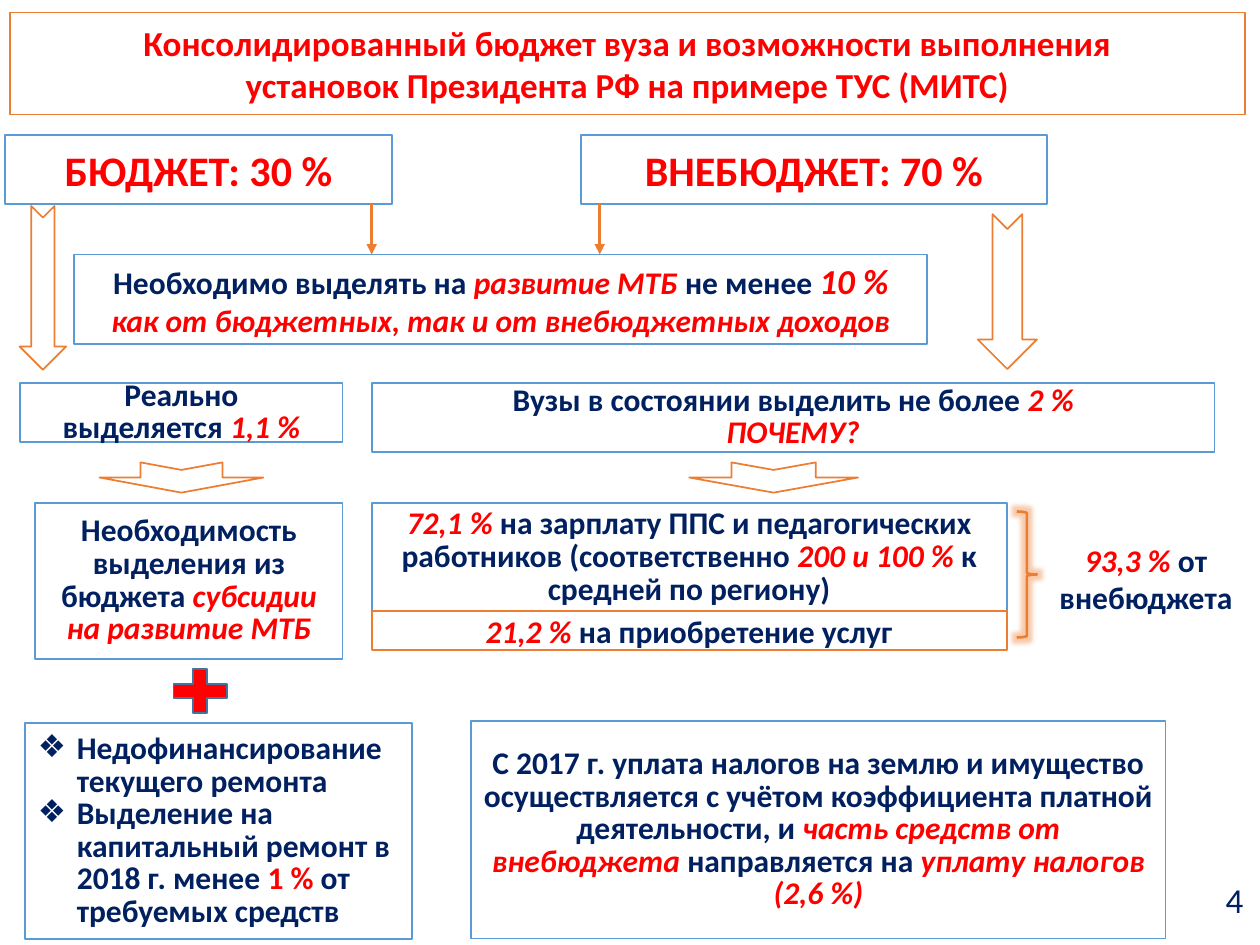
"""Build the slide on a university's consolidated budget."""
from lxml import etree
from pptx import Presentation
from pptx.dml.color import RGBColor
from pptx.enum.shapes import MSO_CONNECTOR, MSO_SHAPE
from pptx.enum.text import MSO_ANCHOR, MSO_AUTO_SIZE, PP_ALIGN
from pptx.oxml.ns import qn
from pptx.util import Inches, Pt

RECT = MSO_SHAPE.RECTANGLE
ARROW = MSO_SHAPE.NOTCHED_RIGHT_ARROW
BRACE = MSO_SHAPE.RIGHT_BRACE
PLUS = MSO_SHAPE.MATH_PLUS
LINE = MSO_CONNECTOR.STRAIGHT
MIDDLE = MSO_ANCHOR.MIDDLE
FIXED = MSO_AUTO_SIZE.NONE
LEFT, CENTER = PP_ALIGN.LEFT, PP_ALIGN.CENTER

HUES = {"white": "FFFFFF", "red": "FF0000", "navy": "002060",
        "blue": "5B9BD5", "orange": "ED7D31", "steel": "43739E"}
LOOKS = {"base": ("navy", True, False), "key": ("red", True, True),
         "head": ("red", True, False), "page": ("navy", False, False)}
COLS, ROWS = 100, 75
TIGHT = Pt(18.6)


class Board:
    """Hold the style and the current slide."""

    def __init__(self, deck):
        self.slide = deck.slides.add_slide(deck.slide_layouts[1])
        self.col = deck.slide_width / COLS
        self.row = deck.slide_height / ROWS
        self.font = "Calibri"

    def hue(self, name):
        return RGBColor.from_string(HUES[name])

    def spot(self, x, y):
        return round(x * self.col), round(y * self.row)

    def paint(self, shape, fill, line, width=1):
        if fill:
            shape.fill.solid()
            shape.fill.fore_color.rgb = self.hue(fill)
        else:
            shape.fill.background()
        if line:
            shape.line.color.rgb = self.hue(line)
            shape.line.width = Pt(width)
        else:
            shape.line.fill.background()

    def form(self, kind, at, fill="white", line="blue", width=1):
        shape = self.slide.shapes.add_shape(kind, *self.spot(*at[:2]), *self.spot(*at[2:]))
        shape.shadow.inherit = False
        self.paint(shape, fill, line, width)
        return shape

    def label(self, shape, paras, size=18, space=None, align=CENTER):
        frame = shape.text_frame
        frame.word_wrap = True
        frame.auto_size = FIXED
        frame.vertical_anchor = MIDDLE
        for i, runs in enumerate(paras):
            para = frame.add_paragraph() if i else frame.paragraphs[0]
            para.alignment = align
            para.space_before = Pt(0)
            if space:
                para.line_spacing = space
            for text, look, *big in runs:
                run = para.add_run()
                run.text = text
                font = run.font
                font.name = self.font
                font.size = Pt(big[0] if big else size)
                tone, font.bold, font.italic = LOOKS[look]
                font.color.rgb = self.hue(tone)

    def box(self, at, paras, line="blue", size=18, space=None):
        self.label(self.form(RECT, at, line=line), paras, size, space)

    def holder(self, index, at, line):
        shape = self.slide.placeholders[index]
        shape.left, shape.top = self.spot(*at[:2])
        shape.width, shape.height = self.spot(*at[2:])
        self.paint(shape, "white", line)
        return shape

    def title(self, at, paras):
        self.label(self.holder(0, at, "orange"), paras, 20)

    def bullets(self, at, paras):
        shape = self.holder(1, at, "blue")
        self.label(shape, paras, space=TIGHT, align=LEFT)
        for para in shape.text_frame.paragraphs:
            props = para._p.get_or_add_pPr()
            props.set("marL", str(Inches(0.31)))
            props.set("indent", str(-Inches(0.31)))
            etree.SubElement(props, qn("a:buChar")).set("char", "❖")

    def down(self, x, y, wide, high):
        shape = self.form(ARROW, (x + (wide - high) / 2, y + (high - wide) / 2, high, wide),
                          line="orange")
        shape.rotation = 90

    def link(self, x, top, end):
        line = self.slide.shapes.add_connector(LINE, *self.spot(x, top), *self.spot(x, end))
        line.line.color.rgb = self.hue("orange")
        line.line.width = Pt(1.5)
        props = line._element.spPr
        tail = etree.SubElement(props.find(qn("a:ln")), qn("a:tailEnd"))
        tail.set("type", "triangle")
        etree.SubElement(props, qn("a:effectLst"))

    def brace(self, at):
        shape = self.form(BRACE, at, None, "orange", 1.5)
        effects = shape._element.spPr.find(qn("a:effectLst"))
        glow = etree.SubElement(effects, qn("a:glow"), rad=str(Pt(5)))
        tone = etree.SubElement(glow, qn("a:srgbClr"), val=HUES["orange"])
        etree.SubElement(tone, qn("a:alpha"), val="40000")


def main():
    deck = Presentation()
    deck.slide_width, deck.slide_height = Inches(10), Inches(7.5)
    board = Board(deck)

    board.title((0.8, 1, 98, 8.1), [
        [("Консолидированный бюджет вуза и возможности выполнения", "head")],
        [("установок Президента РФ на примере ТУС (МИТС)", "head")]])
    board.bullets((2, 57.4, 30.7, 17.1), [
        [("Недофинансирование текущего ремонта", "base")],
        [("Выделение на капитальный ремонт в 2018 г. менее ", "base"),
         ("1 % ", "head"), ("от требуемых средств", "base")]])

    for x, wide, text in ((0.4, 30.7, "БЮДЖЕТ: 30 %"), (46.1, 37, "ВНЕБЮДЖЕТ: 70 %")):
        board.box((x, 10.7, wide, 5.5), [[(text, "head")]], size=24)
    for x in (29.5, 47.6):
        board.link(x, 16.2, 20.2)
    board.box((5.9, 20.2, 67.7, 7.1), [
        [("Необходимо выделять на ", "base"), ("развитие МТБ ", "key"),
         ("не менее ", "base"), ("10 %", "key", 20)],
        [("как от бюджетных, так и от внебюджетных доходов", "key")]])

    for area in ((1.55, 16.35, 3.7, 13), (77.6, 17, 4.7, 12.3),
                 (7.9, 36.7, 13, 2.4), (54.7, 36.7, 13.4, 2.4)):
        board.down(*area)

    board.box((1.6, 30.4, 25.6, 4.7), [
        [("Реально", "base")],
        [("выделяется ", "base"), ("1,1 %", "key")]], space=TIGHT)
    board.box((29.5, 30.4, 66.9, 5.5), [
        [("Вузы в состоянии выделить не более ", "base"), ("2 %", "key")],
        [("ПОЧЕМУ?", "key")]], space=TIGHT)
    board.box((2.8, 39.9, 24.4, 12.4), [
        [("Необходимость выделения из бюджета ", "base"),
         ("субсидии на развитие МТБ", "key")]], space=TIGHT)
    board.box((29.5, 39.9, 50.4, 8.7), [
        [("72,1 % ", "key"),
         ("на зарплату ППС и педагогических работников (соответственно ", "base"),
         ("200 и 100 % ", "key"), ("к средней по региону)", "base")]], space=TIGHT)
    board.box((29.5, 48.5, 50.4, 3.1), [
        [("21,2 %", "key"), (" на приобретение услуг", "base")]], "orange")
    board.brace((80.7, 40.6, 1.6, 10))
    board.box((83.1, 40.9, 15.7, 10), [
        [("93,3 %", "key"), (" от", "base")], [("внебюджета", "base")]], None)

    board.form(PLUS, (13, 52.5, 5.8, 4.7), "red", "steel")
    board.box((37.4, 57.2, 55.1, 17.3), [
        [("С 2017 г. уплата налогов на землю и имущество осуществляется "
          "с учётом коэффициента платной деятельности, и ", "base"),
         ("часть средств от внебюджета ", "key"), ("направляется на ", "base"),
         ("уплату налогов (2,6 %)", "key")]], space=TIGHT)
    board.box((96.3, 70, 3.3, 2.7), [[("4", "page")]], None, 20)

    deck.save("out.pptx")


if __name__ == "__main__":
    main()
